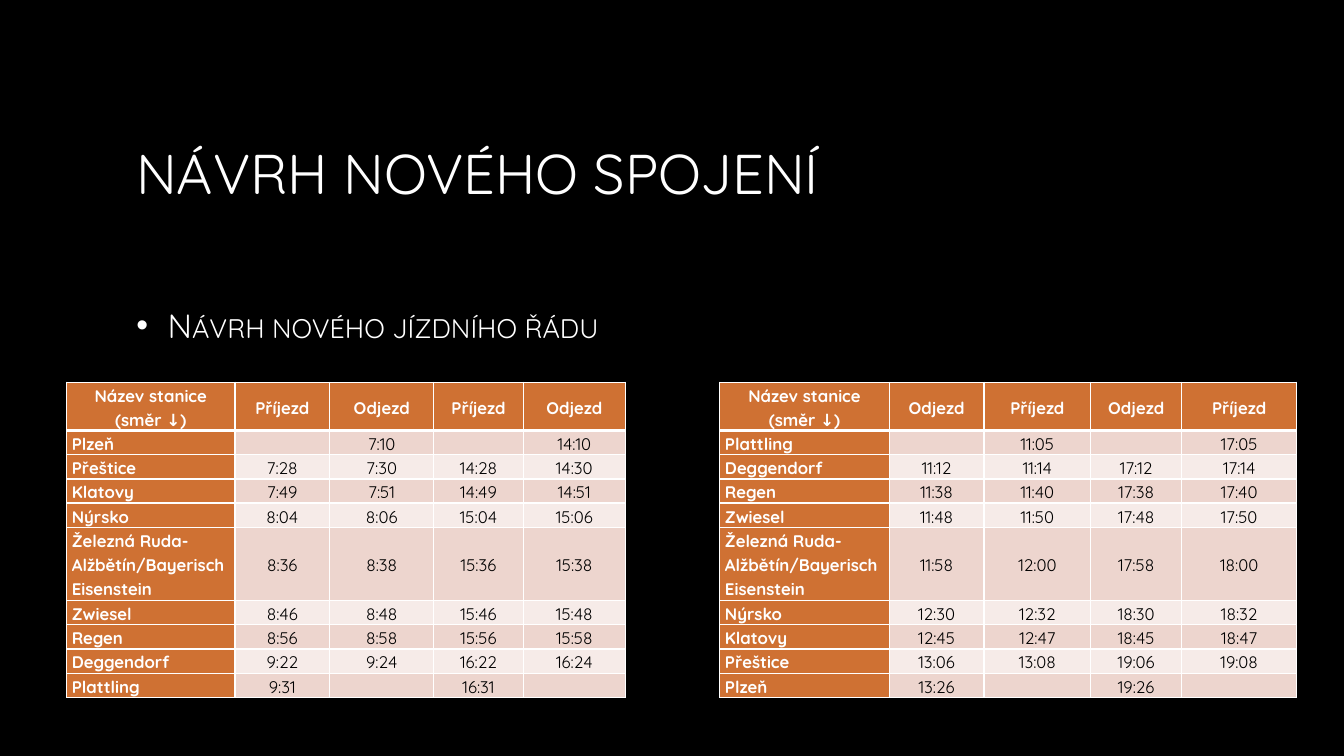
from lxml.etree import SubElement as Sub
from pptx import Presentation
from pptx.dml.color import RGBColor as RGB
from pptx.enum.text import MSO_ANCHOR as Anchor, MSO_AUTO_SIZE as Fit, PP_ALIGN as Align
from pptx.oxml.ns import qn
from pptx.util import Cm, Pt

FONT = "Quicksand"
COLORS = {"back": "000000", "white": "FFFFFF", "black": "000000",
          "head": "CF7133", "dark": "EDD5CE", "light": "F6EBE8",
          "title": "A6A6A6", "body": "BFBFBF"}

TITLE = "NÁVRH NOVÉHO SPOJENÍ"
POINT = "Návrh nového jízdního řádu"
STOP = "Název stanice (směr ↓)"
BORDER = "Železná Ruda-Alžbětín/Bayerisch Eisenstein"

THERE = [
    (STOP, "Příjezd", "Odjezd", "Příjezd", "Odjezd"),
    ("Plzeň", "", "7:10", "", "14:10"),
    ("Přeštice", "7:28", "7:30", "14:28", "14:30"),
    ("Klatovy", "7:49", "7:51", "14:49", "14:51"),
    ("Nýrsko", "8:04", "8:06", "15:04", "15:06"),
    (BORDER, "8:36", "8:38", "15:36", "15:38"),
    ("Zwiesel", "8:46", "8:48", "15:46", "15:48"),
    ("Regen", "8:56", "8:58", "15:56", "15:58"),
    ("Deggendorf", "9:22", "9:24", "16:22", "16:24"),
    ("Plattling", "9:31", "", "16:31", ""),
]
BACK = [
    (STOP, "Odjezd", "Příjezd", "Odjezd", "Příjezd"),
    ("Plattling", "", "11:05", "", "17:05"),
    ("Deggendorf", "11:12", "11:14", "17:12", "17:14"),
    ("Regen", "11:38", "11:40", "17:38", "17:40"),
    ("Zwiesel", "11:48", "11:50", "17:48", "17:50"),
    (BORDER, "11:58", "12:00", "17:58", "18:00"),
    ("Nýrsko", "12:30", "12:32", "18:30", "18:32"),
    ("Klatovy", "12:45", "12:47", "18:45", "18:47"),
    ("Přeštice", "13:06", "13:08", "19:06", "19:08"),
    ("Plzeň", "13:26", "", "19:26", ""),
]
# left edge, column widths, rows
TABLES = [
    (1.68, (4.24, 2.39, 2.62, 2.26, 2.57), THERE),
    (18.14, (4.27, 2.39, 2.69, 2.29, 2.9), BACK),
]
TOP = 9.63
HIGH = {STOP: 1.22, BORDER: 1.85}
ROW = 0.58


def color(name):
    return RGB.from_string(COLORS[name])


def place(shape, left, top, width, height):
    shape.left, shape.top = Cm(left), Cm(top)
    shape.width, shape.height = Cm(width), Cm(height)


def write(shape, text, size, end):
    """Fill a placeholder with one line that fades from white to the end colour."""
    frame = shape.text_frame
    frame.text = text
    frame.word_wrap = True
    frame.auto_size = Fit.NONE
    frame.vertical_anchor = Anchor.MIDDLE
    par = frame.paragraphs[0]
    par.alignment = Align.LEFT
    par.space_before = Pt(0)
    font = par.runs[0].font
    font.name, font.size = FONT, Pt(size)
    font.fill.gradient()
    font.fill.gradient_angle = 267
    for stop, name in zip(font.fill.gradient_stops, ("white", end)):
        stop.color.rgb = color(name)
    return par


def bullet(par):
    props = par._p.get_or_add_pPr()
    props.set("marL", str(Cm(0.79)))
    props.set("indent", str(-Cm(0.79)))
    tint = Sub(props, qn("a:buClr"))
    Sub(tint, qn("a:srgbClr"), val=COLORS["white"])
    Sub(props, qn("a:buFont"), typeface="Arial")
    Sub(props, qn("a:buChar"), char="•")


def edge(cell, side, width):
    props = cell._tc.get_or_add_tcPr()
    line = Sub(props, qn("a:ln" + side), w=str(Pt(width)))
    fill = Sub(line, qn("a:solidFill"))
    Sub(fill, qn("a:srgbClr"), val=COLORS["white"])


def style(cell, text, row, col):
    head = row == 0 or col == 0
    cell.margin_left = cell.margin_right = Cm(0.13)
    cell.margin_top = cell.margin_bottom = 0
    cell.vertical_anchor = Anchor.MIDDLE
    for side in "LRTB":
        thick = (row == 0 and side == "B") or (row == 1 and side == "T")
        edge(cell, side, 3 if thick else 1)
    cell.fill.solid()
    cell.fill.fore_color.rgb = color("head" if head else "dark" if row % 2 else "light")
    cell.text_frame.text = text
    par = cell.text_frame.paragraphs[0]
    par.line_spacing = 1.15
    par.alignment = Align.LEFT if row and col == 0 else Align.CENTER
    if not text:
        Sub(par._p, qn("a:endParaRPr"), sz="1200")
    for run in par.runs:
        run.font.name, run.font.size, run.font.bold = FONT, Pt(12), head
        run.font.color.rgb = color("white" if head else "black")


def timetable(slide, left, widths, rows):
    heights = [HIGH.get(row[0], ROW) for row in rows]
    table = slide.shapes.add_table(len(rows), len(widths), Cm(left), Cm(TOP),
                                   Cm(sum(widths)), Cm(sum(heights))).table
    table.horz_banding = False
    for col, width in zip(table.columns, widths):
        col.width = Cm(width)
    for r, (row, height) in enumerate(zip(rows, heights)):
        table.rows[r].height = Cm(height)
        for c, text in enumerate(row):
            style(table.cell(r, c), text, r, c)


def main():
    deck = Presentation()
    deck.slide_width, deck.slide_height = Cm(33.87), Cm(19.05)
    slide = deck.slides.add_slide(deck.slide_layouts[1])
    slide.background.fill.solid()
    slide.background.fill.fore_color.rgb = color("back")

    title, body = slide.placeholders
    place(title, 3.18, 1.7, 27.5, 5.28)
    write(title, TITLE, 40, "title")
    place(body, 3.18, 4.34, 27.5, 8.69)
    par = write(body, POINT, 24, "body")
    bullet(par)
    par.runs[0].font._element.set("cap", "small")
    body.text_frame.margin_bottom = Cm(1.1)

    for left, widths, rows in TABLES:
        timetable(slide, left, widths, rows)
    deck.save("out.pptx")


if __name__ == "__main__":
    main()
